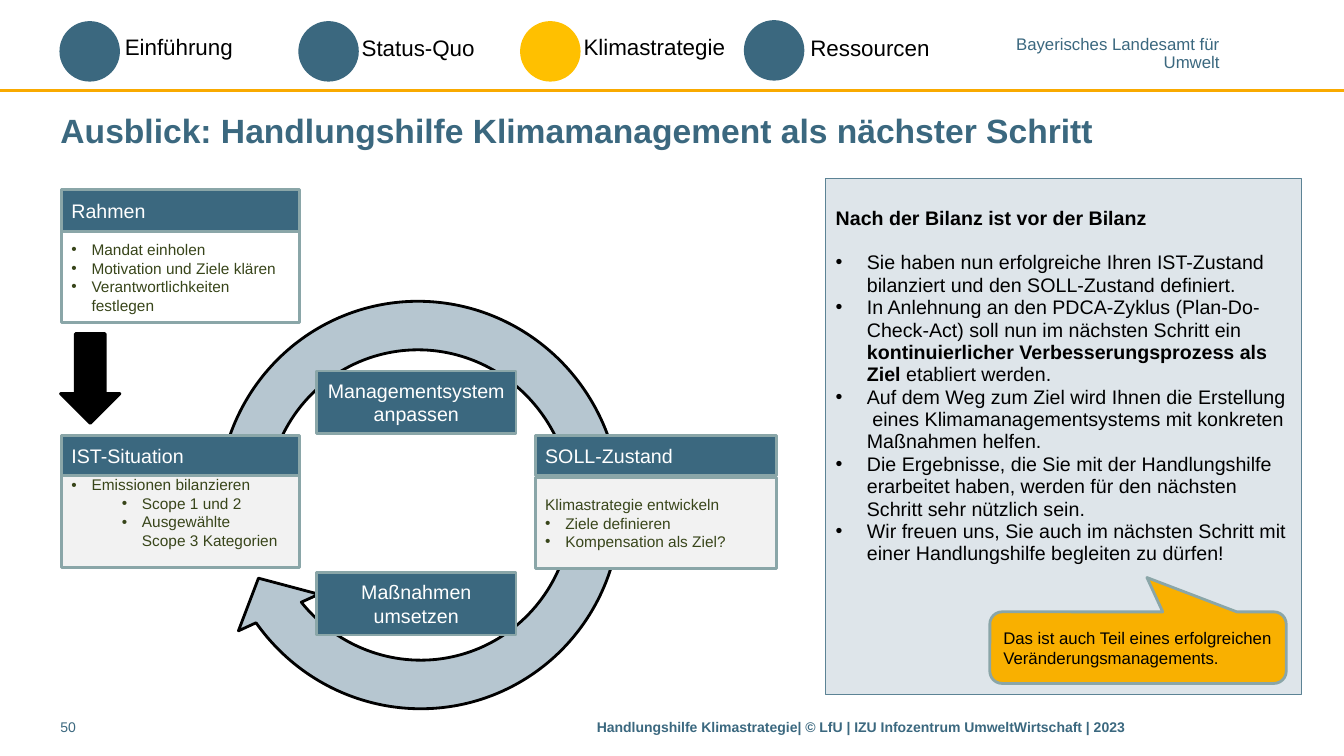
from lxml import etree
from pptx import Presentation
from pptx.dml.color import RGBColor
from pptx.enum.shapes import MSO_CONNECTOR, MSO_SHAPE
from pptx.enum.text import MSO_ANCHOR, MSO_AUTO_SIZE, PP_ALIGN
from pptx.oxml.ns import qn
from pptx.util import Inches, Pt

LEFT, MID, RIGHT = PP_ALIGN.LEFT, PP_ALIGN.CENTER, PP_ALIGN.RIGHT
TOP, CENTRE = MSO_ANCHOR.TOP, MSO_ANCHOR.MIDDLE
FIXED, GROW = MSO_AUTO_SIZE.NONE, MSO_AUTO_SIZE.SHAPE_TO_FIT_TEXT
RECT, OVAL = MSO_SHAPE.RECTANGLE, MSO_SHAPE.OVAL
RING, ARROW = MSO_SHAPE.CIRCULAR_ARROW, MSO_SHAPE.RIGHT_ARROW
BUBBLE = MSO_SHAPE.ROUNDED_RECTANGULAR_CALLOUT
STRAIGHT = MSO_CONNECTOR.STRAIGHT

CELL = Inches(0.1)
COLS, ROWS = 133.33, 75
BLUE, EDGE, BLACK, WHITE = "3B687F", "8AA6A8", "000000", "FFFFFF"
GREY, OLIVE = "F2F2F2", "38451A"

SLIM = {"margin_left": 0, "margin_right": 0}
HEAD = {"size": 14, "color": WHITE}
BODY = {"size": 11, "color": OLIVE}

NAV = [
    ("Einführung", 5.9, 2.1, 11.4, 2.8, 13.6, BLUE),
    ("Status-Quo", 29.6, 2.1, 34.9, 2.9, 13.6, BLUE),
    ("Klimastrategie", 51.6, 2.1, 56.9, 2.8, 29.5, "FFC000"),
    ("Ressourcen", 73.8, 2, 79.4, 2.9, 29.5, BLUE),
]

ADVICE = [
    "Sie haben nun erfolgreiche Ihren IST-Zustand bilanziert und den SOLL-Zustand definiert.",
    "In Anlehnung an den PDCA-Zyklus (Plan-Do-Check-Act) soll nun im nächsten Schritt ein "
    "**kontinuierlicher Verbesserungsprozess als Ziel** etabliert werden.",
    "Auf dem Weg zum Ziel wird Ihnen die Erstellung  eines Klimamanagementsystems "
    "mit konkreten Maßnahmen helfen.",
    "Die Ergebnisse, die Sie mit der Handlungshilfe erarbeitet haben, werden für den "
    "nächsten Schritt sehr nützlich sein.",
    "Wir freuen uns, Sie auch im nächsten Schritt mit einer Handlungshilfe begleiten zu dürfen!",
]


def rgb(code):
    return RGBColor.from_string(code)


def grid(*units):
    return [round(unit * CELL) for unit in units]


def assign(target, values):
    for name, value in values.items():
        setattr(target, name, value)


def place(shape, box):
    assign(shape, dict(zip(("left", "top", "width", "height"), grid(*box))))


def paint(shape, fill=None, line=None, width=2):
    shape.shadow.inherit = False
    if fill:
        shape.fill.solid()
        shape.fill.fore_color.rgb = rgb(fill)
    else:
        shape.fill.background()
    if line:
        shape.line.color.rgb = rgb(line)
        shape.line.width = Pt(width)
    else:
        shape.line.fill.background()


def indent(para, left, hang):
    """Set the left margin, and a bullet where the first line hangs."""
    props = para._p.get_or_add_pPr()
    props.set("marL", str(Inches(left)))
    props.set("indent", str(-Inches(hang)))
    if hang:
        etree.SubElement(props, qn("a:buFont"), typeface="Arial")
        etree.SubElement(props, qn("a:buChar"), char="•")
    else:
        etree.SubElement(props, qn("a:buNone"))
    para.level = 1 if left > hang else 0


def fill_para(para, text, size, color, bold=False):
    """Add runs; ** toggles bold and a newline breaks the line."""
    for turn, part in enumerate(text.split("**")):
        for row, piece in enumerate(part.split("\n")):
            if row:
                para.add_line_break()
                etree.SubElement(para._p[-1], qn("a:rPr"), sz=str(size * 100))
            run = para.add_run()
            run.text = piece
            assign(run.font, {"name": "Arial", "size": Pt(size),
                              "bold": bold or turn % 2 == 1})
            run.font.color.rgb = rgb(color)


def write(shape, lines, font, frame=None, para=None):
    """Write lines, each a string or a (left, hang, string) bullet."""
    box = shape.text_frame
    assign(box, {"word_wrap": True, "auto_size": FIXED,
                 "vertical_anchor": CENTRE, **(frame or {})})
    for place_no, line in enumerate(lines):
        left, hang, text = (0, 0, line) if isinstance(line, str) else line
        item = box.add_paragraph() if place_no else box.paragraphs[0]
        indent(item, left, hang)
        assign(item, {"alignment": LEFT, "space_before": Pt(0), **(para or {})})
        fill_para(item, text, **font)


def add_box(slide, kind, box, fill=None, line=None):
    shape = slide.shapes.add_shape(kind, *grid(*box))
    paint(shape, fill, line)
    return shape


def add_label(slide, box, lines, font, frame=None, para=None):
    label = slide.shapes.add_textbox(*grid(*box))
    write(label, lines, font, {"vertical_anchor": TOP, **(frame or {})}, para)


def add_nav(slide):
    rule = slide.shapes.add_connector(STRAIGHT, *grid(0, 9, COLS, 9))
    rule.line.color.rgb = rgb("F9AA00")
    rule.line.width = Pt(2)
    etree.SubElement(rule._element.spPr, qn("a:effectLst"))
    add_label(slide, (100.7, 3.7, 20.3, 3.4), ["Bayerisches Landesamt für", "Umwelt"],
              {"size": 12, "color": BLUE},
              {**SLIM, "margin_top": 0, "margin_bottom": 0,
               "word_wrap": False, "auto_size": GROW},
              {"alignment": RIGHT, "line_spacing": 0.85})
    for name, x, y, left, top, width, color in NAV:
        add_box(slide, OVAL, (x, y, 6, 6), color)
        add_label(slide, (left, top, width, 3.7), [name],
                  {"size": 16, "color": BLACK}, {"auto_size": GROW})


def add_panel(panel):
    place(panel, (81.9, 17.7, 47.2, 51.2))
    paint(panel, "DEE5EA", "5C8395", 1)
    write(panel, ["**Nach der Bilanz ist vor der Bilanz**"] +
          [(0.31, 0.31, text) for text in ADVICE],
          {"size": 14, "color": BLACK},
          {"vertical_anchor": TOP, "margin_top": Inches(0.28)},
          {"line_spacing": Pt(16)})
    panel.text_frame.paragraphs[1].space_before = Pt(16)


def add_cycle(slide):
    ring = add_box(slide, RING, (19.4, 28.2, 44.4, 43.8), "B6C6D0", BLACK)
    ring.rotation = 256.3
    for spot, value in enumerate((0.11, 7.75, 147.79, 165.18, 0.1)):
        ring.adjustments[spot] = value

    for name, x, y, width, height, align in (
            ("Rahmen", 6.1, 18.8, 23.6, 4.2, LEFT),
            ("IST-Situation", 6.1, 43.2, 23.6, 4, LEFT),
            ("SOLL-Zustand", 53.1, 43.2, 23.9, 4, LEFT),
            ("Maßnahmen umsetzen", 31.4, 56.8, 19.8, 6.2, MID),
            ("Managementsystem anpassen", 31.4, 36.8, 19.8, 6.2, MID)):
        head = add_box(slide, RECT, (x, y, width, height), BLUE, EDGE)
        write(head, [name], HEAD, para={"alignment": align})

    for box, fill, lines, frame in (
            ((6.1, 23, 23.6, 9), None,
             [(0.2, 0.2, "Mandat einholen"),
              (0.2, 0.2, "Motivation und Ziele klären"),
              (0.2, 0.2, "Verantwortlichkeiten festlegen")], None),
            ((6.1, 47.2, 23.6, 9.1), GREY,
             [(0.2, 0.2, "Emissionen bilanzieren"),
              (0.7, 0.2, "Scope 1 und 2"),
              (0.7, 0.2, "Ausgewählte\nScope 3 Kategorien")],
             {"margin_bottom": Inches(0.23)}),
            ((53.1, 47.4, 23.9, 9), GREY,
             ["Klimastrategie entwickeln",
              (0.2, 0.2, "Ziele definieren"),
              (0.2, 0.2, "Kompensation als Ziel?")], None)):
        write(add_box(slide, RECT, box, fill, EDGE), lines, BODY, frame)

    add_box(slide, ARROW, (4.5, 34.6, 8.9, 5.9), BLACK, BLACK).rotation = 90


def add_bubble(slide):
    note = add_box(slide, BUBBLE, (98.2, 60.7, 29.4, 7.1), "F9B000", EDGE)
    for spot, value in enumerate((0.03, -0.98, 0.17)):
        note.adjustments[spot] = value
    write(note, ["Das ist auch Teil eines erfolgreichen Veränderungsmanagements."],
          {"size": 12, "color": BLACK})


def main():
    deck = Presentation()
    deck.slide_width, deck.slide_height = grid(COLS, ROWS)
    slide = deck.slides.add_slide(deck.slide_layouts[1])
    title, panel = slide.placeholders
    place(title, (6, 10.2, 123.1, 5.5))
    write(title, ["Ausblick: Handlungshilfe Klimamanagement als nächster Schritt"],
          {"size": 24, "color": BLUE, "bold": True}, SLIM)
    add_panel(panel)
    add_nav(slide)
    add_label(slide, (59.2, 70.8, 69.9, 3.1),
              ["Handlungshilfe Klimastrategie| © LfU | IZU Infozentrum UmweltWirtschaft | 2023"],
              {"size": 10, "color": BLUE, "bold": True}, SLIM)
    add_label(slide, (6, 70.8, 7, 3.1), ["50"], {"size": 10, "color": BLUE}, SLIM)
    add_cycle(slide)
    add_bubble(slide)
    deck.save("out.pptx")


if __name__ == "__main__":
    main()
